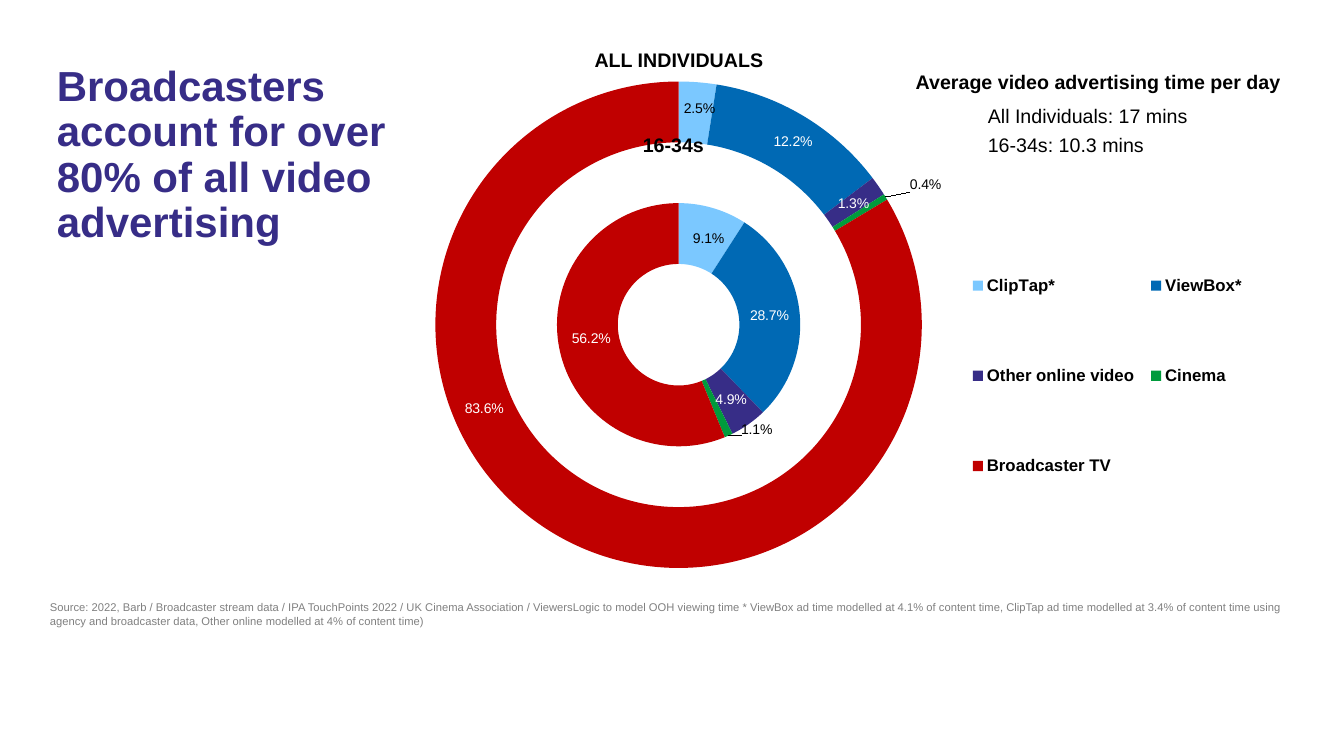
"""Build a slide with a doughnut chart of video advertising time by channel."""
from lxml import etree
from pptx import Presentation
from pptx.chart.data import CategoryChartData
from pptx.dml.color import RGBColor
from pptx.enum.chart import XL_CHART_TYPE, XL_LEGEND_POSITION
from pptx.enum.text import PP_ALIGN
from pptx.oxml.ns import qn
from pptx.util import Pt

DOUGHNUT = XL_CHART_TYPE.DOUGHNUT
LEGEND_RIGHT = XL_LEGEND_POSITION.RIGHT
LEFT = PP_ALIGN.LEFT
CENTER = PP_ALIGN.CENTER
FONT = "Arial"
CHART_WIDTH = 691
CHART_HEIGHT = 438
COLORS = {
    "black": "000000", "white": "FFFFFF", "gray": "808080", "light blue": "7BC8FF",
    "blue": "0069B4", "purple": "372D87", "green": "009B3C", "red": "C00000",
}


def style_font(font, size, color, bold=False):
    font.name = FONT
    font.size = Pt(size)
    font.bold = bold
    font.color.rgb = RGBColor.from_string(COLORS[color])


def make_layout(modes, **lengths):
    layout = etree.Element(qn("c:layout"))
    manual = etree.SubElement(layout, qn("c:manualLayout"))
    for name, value in modes.items():
        etree.SubElement(manual, qn(f"c:{name}")).set("val", value)
    for name, points in lengths.items():
        total = CHART_WIDTH if name in "xw" else CHART_HEIGHT
        etree.SubElement(manual, qn(f"c:{name}")).set("val", str(points / total))
    return layout


presentation = Presentation()
presentation.slide_width = Pt(960)
presentation.slide_height = Pt(540)
slide = presentation.slides.add_slide(presentation.slide_layouts[6])

channels = {
    "ClipTap*": "light blue", "ViewBox*": "blue", "Other online video": "purple",
    "Cinema": "green", "Broadcaster TV": "red",
}
chart_data = CategoryChartData()
chart_data.categories = list(channels)
chart_data.add_series("16-34s", (9.1, 28.7, 4.9, 1.1, 56.2))
chart_data.add_series("Spacer", (None,) * len(channels))
chart_data.add_series("All Individuals", (2.5, 12.2, 1.3, 0.4, 83.6))
chart = slide.shapes.add_chart(
    DOUGHNUT, Pt(231), Pt(10), Pt(CHART_WIDTH), Pt(CHART_HEIGHT), chart_data).chart
style_font(chart.font, 18, "black")
chart.has_title = False
chart.has_legend = True
chart.legend.position = LEGEND_RIGHT
chart.legend.include_in_layout = False
style_font(chart.legend.font, 12, "black", True)

plot = chart.plots[0]
plot.vary_by_categories = True
plot._element.find(qn("c:holeSize")).set("val", "47")
edge_modes = {"xMode": "edge", "yMode": "edge"}
plot_area = chart._chartSpace.chart.plotArea
legend_element = chart.legend._element
for parent in (plot_area, legend_element):
    for old_layout in parent.findall(qn("c:layout")):
        parent.remove(old_layout)
plot_area.insert(0, make_layout(
    {"layoutTarget": "inner", **edge_modes}, x=80, y=44.5, w=347.5, h=355))
legend_element.find(qn("c:legendPos")).addnext(
    make_layout(edge_modes, x=456, y=136, w=208, h=245))

label_offsets = {
    "16-34s": {0: (3, 1), 3: (29, 16), 4: (1.5, -2.5)},
    "All Individuals": {0: (3, -2.5), 1: (3.5, 0), 3: (47, -20.5), 4: (-64, -72)},
}
for series in plot.series:
    for index, color in enumerate(channels.values()):
        point_format = series.points[index].format
        point_format.fill.solid()
        point_format.fill.fore_color.rgb = RGBColor.from_string(COLORS[color])
        point_format.line.fill.background()
    if series.name not in label_offsets:
        continue
    labels = series.data_labels
    labels.show_value = False
    labels.show_percentage = True
    labels.number_format = "0.0%"
    labels.number_format_is_linked = False
    style_font(labels.font, 10, "white")
    for index, (x, y) in label_offsets[series.name].items():
        text_color = "black" if index in (0, 3) else "white"
        style_font(series.points[index].data_label.font, 10, text_color)
        label = labels._element.xpath(f"c:dLbl[c:idx/@val='{index}']")[0]
        label.find(qn("c:showVal")).set("val", "0")
        label.find(qn("c:showPercent")).set("val", "1")
        for position in label.findall(qn("c:dLblPos")):
            label.remove(position)
        layout = make_layout({}, x=x, y=y)
        label.find(qn("c:idx")).addnext(layout)
        number_format = etree.Element(qn("c:numFmt"), formatCode="0.0%", sourceLinked="0")
        layout.addnext(number_format)

source_note = (
    "Source: 2022, Barb / Broadcaster stream data / IPA TouchPoints 2022 / UK Cinema "
    "Association / ViewersLogic to model OOH viewing time * ViewBox ad time modelled at 4.1% "
    "of content time, ClipTap ad time modelled at 3.4% of content time using agency and "
    "broadcaster data, Other online modelled at 4% of content time)")
title = "Broadcasters account for over 80% of all video advertising"
texts = [
    (source_note, 28.5, 425.5, 902, 24, 8, "gray", False, LEFT),
    ("All Individuals: 17 mins", 698.5, 71, 215, 24, 14, "black", False, LEFT),
    ("16-34s: 10.3 mins", 698.5, 91.5, 182, 24, 14, "black", False, LEFT),
    ("Average video advertising time per day", 639.5, 46.5, 290, 24, 14, "black", True, CENTER),
    ("ALL INDIVIDUALS", 415.5, 31, 139, 24, 14, "black", True, CENTER),
    ("16-34s", 438.5, 91.5, 85, 24, 14, "black", True, CENTER),
    (title, 33.5, 43, 284, 199, 30, "purple", True, LEFT),
]
for text, left, top, width, height, size, color, bold, alignment in texts:
    box = slide.shapes.add_textbox(Pt(left), Pt(top), Pt(width), Pt(height))
    box.text_frame.word_wrap = True
    paragraph = box.text_frame.paragraphs[0]
    paragraph.alignment = alignment
    if text == title:
        paragraph.line_spacing = 0.9
    run = paragraph.add_run()
    run.text = text
    style_font(run.font, size, color, bold)

presentation.save("out.pptx")
